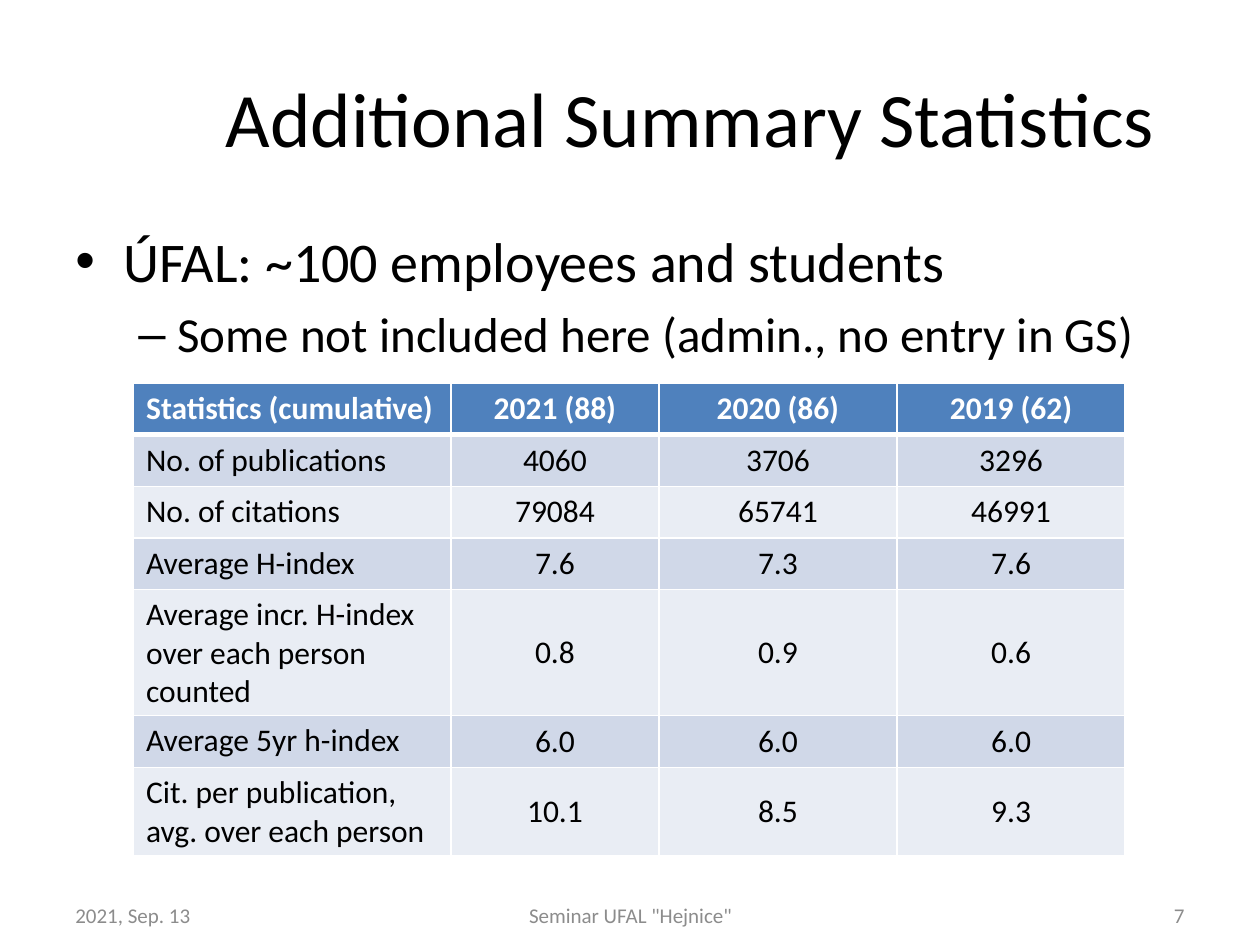
from lxml.etree import SubElement
from pptx import Presentation
from pptx.dml.color import RGBColor
from pptx.enum.text import MSO_ANCHOR as Anchor, PP_ALIGN as Align
from pptx.oxml.ns import qn
from pptx.util import Inches, Pt

FONT = "Calibri"
COLORS = {"text": "000000", "muted": "8C8C8C", "white": "FFFFFF",
          "header": "4F81BD", "odd": "D0D8E8", "even": "E9EDF4"}
TITLE = "Additional Summary Statistics"
BULLETS = [
    ("ÚFAL: ~100 employees and students", 0, "•", 32, 0.38, -0.38, 0),
    ("Some not included here (admin., no entry in GS)", 1, "–", 28, 0.81, -0.31, 5.6),
]
FOOTERS = [
    ("2021, Sep. 13", 0.5, 2.33, Align.LEFT),
    ('Seminar UFAL "Hejnice"', 3.42, 3.17, Align.CENTER),
    ("7", 7.17, 2.33, Align.RIGHT),
]
STATISTICS = [
    ("Statistics (cumulative)", "2021 (88)", "2020 (86)", "2019 (62)"),
    ("No. of publications", "4060", "3706", "3296"),
    ("No. of citations", "79084", "65741", "46991"),
    ("Average H-index", "7.6", "7.3", "7.6"),
    ("Average incr. H-index over each person counted", "0.8", "0.9", "0.6"),
    ("Average 5yr h-index", "6.0", "6.0", "6.0"),
    ("Cit. per publication, avg. over each person", "10.1", "8.5", "9.3"),
]
COLUMN_WIDTHS = (2.52, 1.65, 1.89, 1.81)
ROW_HEIGHT = 0.41


def rgb(name):
    return RGBColor.from_string(COLORS[name])


def add_run(paragraph, text, size, color="text", bold=False, align=Align.LEFT):
    paragraph.alignment = align
    run = paragraph.add_run()
    run.text = text
    run.font.name = FONT
    run.font.size = Pt(size)
    run.font.bold = bold
    run.font.color.rgb = rgb(color)


def add_text_box(slide, left, top, width, height, anchor):
    box = slide.shapes.add_textbox(*map(Inches, (left, top, width, height)))
    frame = box.text_frame
    frame.word_wrap = True
    frame.vertical_anchor = anchor
    return frame


def add_bullets(slide):
    frame = add_text_box(slide, 0.5, 1.75, 9, 4.95, Anchor.TOP)
    for index, (text, level, mark, size, margin, indent, before) in enumerate(BULLETS):
        paragraph = frame.add_paragraph() if index else frame.paragraphs[0]
        paragraph.level = level
        properties = paragraph._p.get_or_add_pPr()
        properties.set("marL", str(Inches(margin)))
        properties.set("indent", str(Inches(indent)))
        SubElement(properties, qn("a:buFont"), typeface="Arial")
        SubElement(properties, qn("a:buChar"), char=mark)
        paragraph.space_before = Pt(before)
        add_run(paragraph, text, size)


def set_borders(cell, widths):
    properties = cell._tc.get_or_add_tcPr()
    for side, width in widths.items():
        line = SubElement(properties, qn(f"a:ln{side}"), w=str(Pt(width)))
        fill = SubElement(line, qn("a:solidFill"))
        SubElement(fill, qn("a:srgbClr"), val=COLORS["white"])


def add_statistics(slide):
    rows, columns = len(STATISTICS), len(COLUMN_WIDTHS)
    table = slide.shapes.add_table(
        rows, columns, Inches(1.06), Inches(3.04),
        Inches(sum(COLUMN_WIDTHS)), Inches(rows * ROW_HEIGHT)).table
    for column, width in zip(table.columns, COLUMN_WIDTHS):
        column.width = Inches(width)
    for row_index, values in enumerate(STATISTICS):
        table.rows[row_index].height = Inches(ROW_HEIGHT)
        header = row_index == 0
        fill = "header" if header else "odd" if row_index % 2 else "even"
        for column_index, value in enumerate(values):
            cell = table.cell(row_index, column_index)
            set_borders(cell, {"L": 1, "R": 1, "T": 3 if row_index == 1 else 1,
                               "B": 3 if header else 1})
            cell.fill.solid()
            cell.fill.fore_color.rgb = rgb(fill)
            cell.vertical_anchor = Anchor.MIDDLE if column_index else Anchor.TOP
            add_run(cell.text_frame.paragraphs[0], value, 18,
                    "white" if header else "text", header,
                    Align.CENTER if column_index else Align.LEFT)


def main():
    presentation = Presentation()
    presentation.slide_width, presentation.slide_height = Inches(10), Inches(7.5)
    slide = presentation.slides.add_slide(presentation.slide_layouts[5])
    title = slide.shapes.title
    title.left, title.top, title.width, title.height = map(Inches, (1.46, 0.3, 8.04, 1.25))
    title.text_frame.vertical_anchor = Anchor.MIDDLE
    add_run(title.text_frame.paragraphs[0], TITLE, 44, align=Align.CENTER)
    add_bullets(slide)
    for text, left, width, align in FOOTERS:
        frame = add_text_box(slide, left, 7.06, width, 0.4, Anchor.MIDDLE)
        add_run(frame.paragraphs[0], text, 12, "muted", align=align)
    add_statistics(slide)
    presentation.save("out.pptx")


if __name__ == "__main__":
    main()
